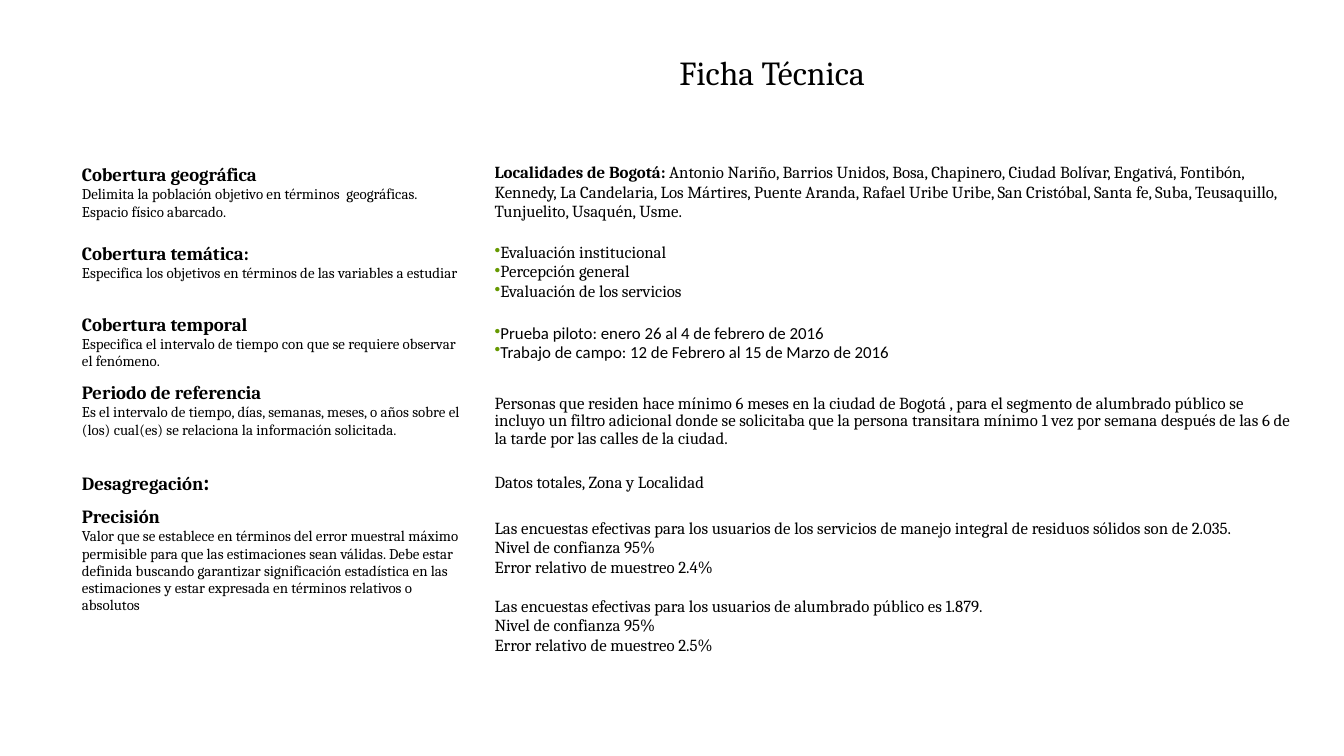
from lxml import etree
from pptx import Presentation
from pptx.dml.color import RGBColor
from pptx.enum.text import MSO_ANCHOR as Anchor, PP_ALIGN as Align
from pptx.oxml.ns import qn
from pptx.util import Inches, Pt

BLACK = RGBColor(0, 0, 0)
WHITE = RGBColor(255, 255, 255)
GREEN = RGBColor(0x66, 0x99, 0x00)
SERIF, SANS = "Cambria", "Calibri"
COLUMN_WIDTHS = (3.07, 6.15)

CONFIDENCE = "Nivel de confianza 95%"
# Each row: height, heading runs (text, size), description, value paragraphs and their options
ROWS = [
    (0.67, [("Cobertura geográfica", 10)],
     "Delimita la población objetivo en términos  geográficas. Espacio físico abarcado.",
     ["Antonio Nariño, Barrios Unidos, Bosa, Chapinero, Ciudad Bolívar, Engativá, Fontibón, "
      "Kennedy, La Candelaria, Los Mártires, Puente Aranda, Rafael Uribe Uribe, San Cristóbal, "
      "Santa fe, Suba, Teusaquillo, Tunjuelito, Usaquén, Usme."],
     {"lead": "Localidades de Bogotá:", "label_anchor": Anchor.MIDDLE}),
    (0.53, [("Cobertura temática:", 10)],
     "Especifica los objetivos en términos de las variables a estudiar",
     ["Evaluación institucional", "Percepción general", "Evaluación de los servicios"],
     {"bullets": True, "tab": 0.5, "anchor": Anchor.TOP}),
    (0.51, [("Cobertura temporal", 10)],
     "Especifica el intervalo de tiempo con que se requiere observar el fenómeno.",
     ["Prueba piloto: enero 26 al 4 de febrero de 2016",
      "Trabajo de campo: 12 de Febrero al 15 de Marzo de 2016"],
     {"bullets": True, "font": SANS, "spacing": 0.9}),
    (0.65, [("Periodo de referencia", 10)],
     "Es el intervalo de tiempo, días, semanas, meses, o años sobre el (los) cual(es) "
     "se relaciona la información solicitada.",
     ["Personas que residen hace mínimo 6 meses en la ciudad de Bogotá , para el segmento de "
      "alumbrado público se incluyo un filtro adicional donde se solicitaba que la persona "
      "transitara mínimo 1 vez por semana después de las 6 de la tarde por las calles de la ciudad."],
     {"spacing": 0.9}),
    (0.27, [("Desagregación", 10), (":", 12)], None, ["Datos totales, Zona y Localidad"], {}),
    (1.28, [("Precisión", 10)],
     "Valor que se establece en términos del error muestral máximo permisible para que las "
     "estimaciones sean válidas. Debe estar definida buscando garantizar significación "
     "estadística en las estimaciones y estar expresada en términos relativos o absolutos",
     ["Las encuestas efectivas para los usuarios de los servicios de manejo integral de "
      "residuos sólidos son de 2.035.", CONFIDENCE, "Error relativo de muestreo 2.4%",
      "Las encuestas efectivas para los usuarios de alumbrado público es 1.879.",
      CONFIDENCE, "Error relativo de muestreo 2.5%"],
     {"gap_before": 3}),
]


def add_span(para, text, size, font=SERIF, bold=False):
    span = para.add_run()
    span.text = text
    span.font.name, span.font.size, span.font.bold = font, Pt(size), bold
    span.font.color.rgb = BLACK


def add_bullet(para, tab=None):
    props = para._p.get_or_add_pPr()
    color = etree.SubElement(props, qn("a:buClr"))
    etree.SubElement(color, qn("a:srgbClr"), val=str(GREEN))
    etree.SubElement(props, qn("a:buChar"), char="•")
    if tab:
        tabs = etree.SubElement(props, qn("a:tabLst"))
        etree.SubElement(tabs, qn("a:tab"), pos=str(Inches(tab)), algn="l")


def format_cell(cell, anchor):
    cell.vertical_anchor = anchor
    cell.margin_left = cell.margin_right = Inches(0.1)
    cell.margin_top = cell.margin_bottom = Inches(0.04)


def fill_label(cell, heading, description, anchor):
    format_cell(cell, anchor)
    cell.fill.solid()
    cell.fill.fore_color.rgb = WHITE
    para = cell.text_frame.paragraphs[0]
    props = para._p.get_or_add_pPr()
    props.set("marL", str(Inches(0.38)))
    props.set("indent", str(Inches(-0.38)))
    for text, size in heading:
        add_span(para, text, size, bold=True)
    if description:
        add_span(cell.text_frame.add_paragraph(), description, 8)


def fill_value(cell, texts, lead=None, bullets=False, tab=None, font=SERIF,
               spacing=None, gap_before=None, anchor=Anchor.MIDDLE):
    """Write the value paragraphs; gap_before is the index that opens a second group."""
    format_cell(cell, anchor)
    cell.fill.background()
    frame = cell.text_frame
    for index, text in enumerate(texts):
        para = frame.add_paragraph() if index else frame.paragraphs[0]
        if bullets:
            add_bullet(para, tab)
        if spacing:
            para.line_spacing = spacing
        if index == gap_before:
            para.space_before = Pt(10.5)
        if lead:
            add_span(para, lead, 9, font, bold=True)
            text = " " + text
        add_span(para, text, 9, font)


def add_sheet_table(page, left, top):
    height = sum(row[0] for row in ROWS)
    frame = page.shapes.add_table(len(ROWS), len(COLUMN_WIDTHS), Inches(left), Inches(top),
                                  Inches(sum(COLUMN_WIDTHS)), Inches(height))
    table = frame.table
    table.first_row = table.horz_banding = False
    for column, width in zip(table.columns, COLUMN_WIDTHS):
        column.width = Inches(width)
    for index, (row_height, heading, description, texts, options) in enumerate(ROWS):
        table.rows[index].height = Inches(row_height)
        options = dict(options)
        label_anchor = options.pop("label_anchor", Anchor.TOP)
        fill_label(table.cell(index, 0), heading, description, label_anchor)
        fill_value(table.cell(index, 1), texts, **options)


def place_title(page, left, top, width, height):
    title = page.shapes.title
    title.left, title.top = Inches(left), Inches(top)
    title.width, title.height = Inches(width), Inches(height)
    frame = title.text_frame
    frame.vertical_anchor = Anchor.MIDDLE
    frame.margin_left = frame.margin_right = Inches(0.1)
    frame.margin_top = frame.margin_bottom = Inches(0.01)
    para = frame.paragraphs[0]
    para.alignment = Align.CENTER
    add_span(para, "Ficha Técnica", 18)


def main():
    deck = Presentation()
    deck.slide_width = Inches(10)
    deck.slide_height = deck.slide_width * 9 // 16
    page = deck.slides.add_slide(deck.slide_layouts[5])
    add_sheet_table(page, 0.51, 1.1)
    place_title(page, 1.67, 0.33, 8.15, 0.42)
    deck.save("out.pptx")


if __name__ == "__main__":
    main()
